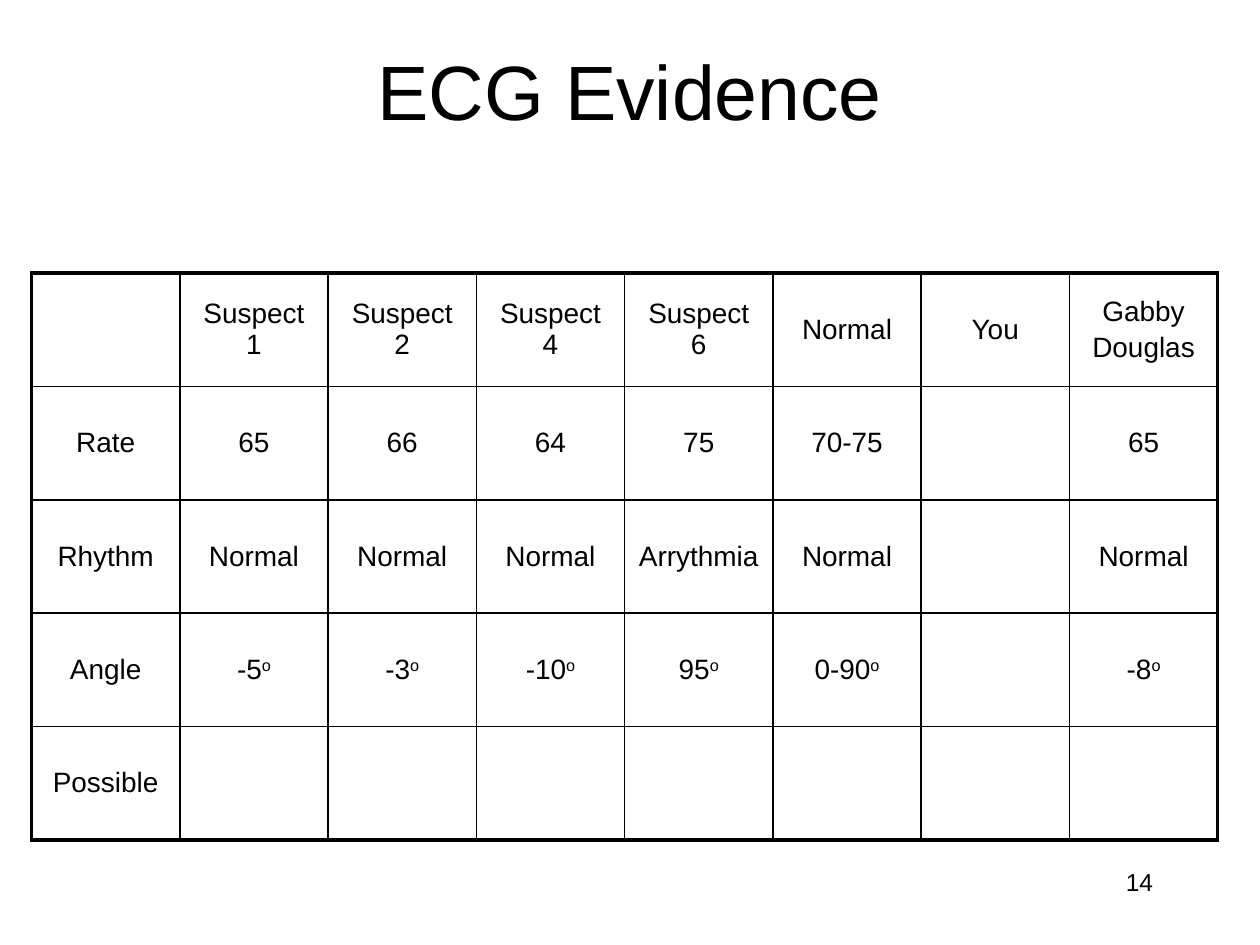
from lxml import etree
from pptx import Presentation
from pptx.dml.color import RGBColor
from pptx.enum import text as enum
from pptx.oxml import ns
from pptx.util import Pt

FONT = "Arial"
BLACK = "000000"
THIN, THICK = 1, 2.25

# "^" marks the start of a superscript, a line break starts a new paragraph
ROWS = [
    ["", "Suspect 1", "Suspect 2", "Suspect 4", "Suspect 6", "Normal", "You",
     "Gabby\nDouglas"],
    ["Rate", "65", "66", "64", "75", "70-75", "", "65"],
    ["Rhythm", "Normal", "Normal", "Normal", "Arrythmia", "Normal", "", "Normal"],
    ["Angle", "-5^o", "-3^o", "-10^o", "95^o", "0-90^o", "", "-8^o"],
    ["Possible", "", "", "", "", "", "", ""],
]


def paint(color, value):
    color.rgb = RGBColor.from_string(value)


def style(run, size):
    run.font.name = FONT
    run.font.size = Pt(size)
    paint(run.font.color, BLACK)


def add_text(slide, words, box, size, align, anchor):
    frame = slide.shapes.add_textbox(*map(Pt, box)).text_frame
    frame.word_wrap = True
    frame.vertical_anchor = anchor
    frame.text = words
    para = frame.paragraphs[0]
    para.alignment = align
    style(para.runs[0], size)


def set_edge(cell, side, width):
    props = cell._tc.get_or_add_tcPr()
    line = etree.SubElement(props, ns.qn(f"a:ln{side}"), w=str(Pt(width)))
    fill = etree.SubElement(line, ns.qn("a:solidFill"))
    etree.SubElement(fill, ns.qn("a:srgbClr"), val=BLACK)


def fill_cell(cell, words, size):
    cell.vertical_anchor = enum.MSO_ANCHOR.MIDDLE
    frame = cell.text_frame
    frame.text = words.replace("^", "\n") if not "^" in words else ""
    if "^" in words:
        base, _, power = words.partition("^")
        for part in (base, power):
            frame.paragraphs[0].add_run().text = part
        frame.paragraphs[0].runs[1].font._element.set("baseline", "30000")
    for para in frame.paragraphs:
        para.alignment = enum.PP_ALIGN.CENTER
        para.space_before = Pt(0.2 * size)
        for run in para.runs:
            style(run, size)


def add_grid(slide, rows, box, size):
    """Table with thin inner lines and a thick outer frame."""
    high, wide = len(rows), len(rows[0])
    table = slide.shapes.add_table(high, wide, *map(Pt, box)).table
    table.first_row = table.horz_banding = False
    for r, row in enumerate(rows):
        for c, words in enumerate(row):
            cell = table.cell(r, c)
            fill_cell(cell, words, size)
            outer = {"L": c == 0, "R": c == wide - 1,
                     "T": r == 0, "B": r == high - 1}
            for side, edge in outer.items():
                set_edge(cell, side, THICK if edge else THIN)
            cell.fill.background()


def main():
    deck = Presentation()
    deck.slide_width, deck.slide_height = Pt(720), Pt(540)
    slide = deck.slides.add_slide(deck.slide_layouts[6])
    add_text(slide, "14", (516, 492, 150, 36), 14,
             enum.PP_ALIGN.RIGHT, enum.MSO_ANCHOR.TOP)
    add_text(slide, "ECG Evidence", (54, 6, 612, 90), 44,
             enum.PP_ALIGN.CENTER, enum.MSO_ANCHOR.MIDDLE)
    add_grid(slide, ROWS, (18, 156, 678, 324), 16)
    deck.save("out.pptx")


if __name__ == "__main__":
    main()
